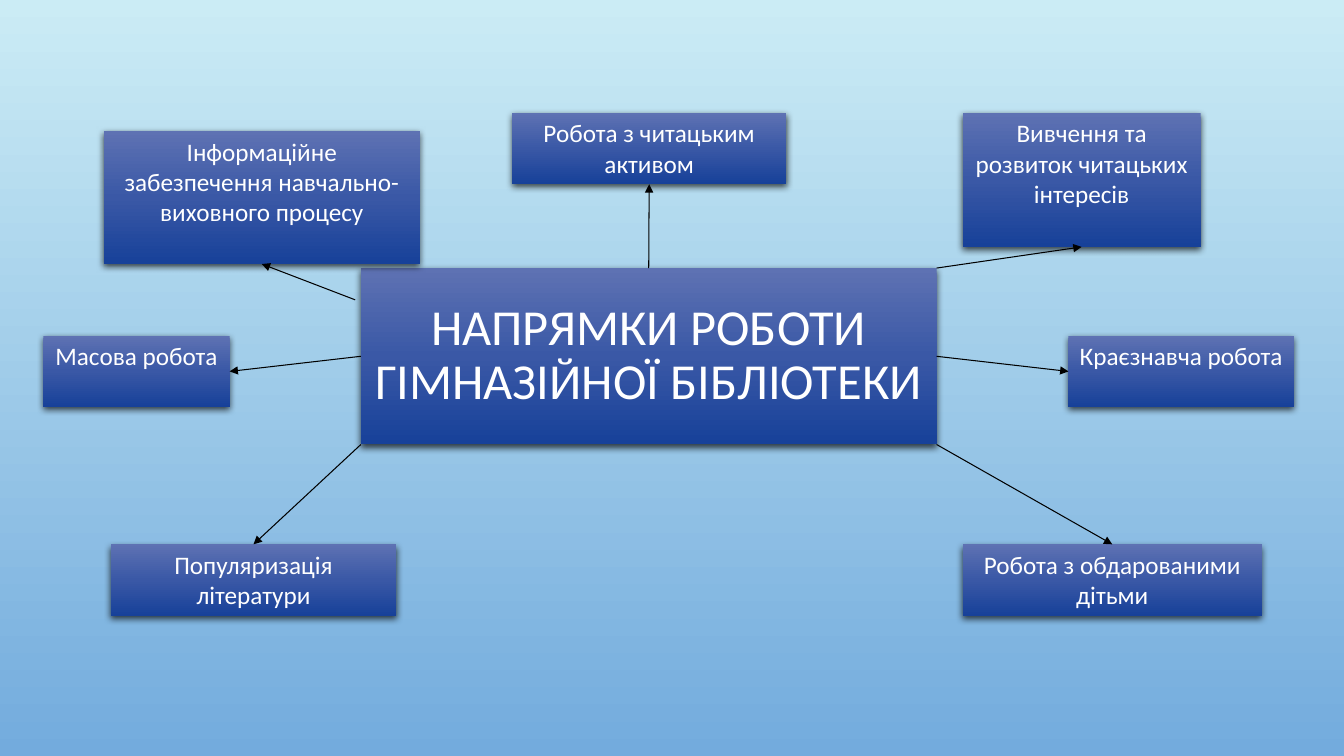
from collections import namedtuple
from copy import deepcopy

from lxml.etree import SubElement
from pptx import Presentation
from pptx.dml.color import RGBColor
from pptx.enum.shapes import MSO_CONNECTOR, MSO_SHAPE
from pptx.enum.text import MSO_ANCHOR, MSO_AUTO_SIZE, PP_ALIGN
from pptx.oxml.ns import qn
from pptx.util import Pt

WHITE = RGBColor(0xFF, 0xFF, 0xFF)
BLACK = RGBColor(0x00, 0x00, 0x00)
SKY = [RGBColor(0xCB, 0xEC, 0xF5), RGBColor(0x73, 0xAB, 0xDD)]
BLUES = [RGBColor(0x5E, 0x72, 0xB3), RGBColor(0x3A, 0x58, 0xA6), RGBColor(0x17, 0x41, 0x99)]

Box = namedtuple("Box", "left top width height")
Direction = namedtuple("Direction", "text box start end")

TITLE = "НАПРЯМКИ РОБОТИ ГІМНАЗІЙНОЇ БІБЛІОТЕКИ"
HUB = Box(257.8, 191.5, 411.2, 126)
TOP, BOTTOM, LEFT, RIGHT = (0.5, 0), (0.5, 1), (0, 0.5), (1, 0.5)
DIRECTIONS = [
    Direction("Інформаційне забезпечення навчально- виховного процесу",
              Box(74, 93.6, 226, 95), (-0.01, 0.18), BOTTOM),
    Direction("Робота з читацьким активом", Box(365.8, 80.6, 195.8, 51), TOP, BOTTOM),
    Direction("Вивчення та розвиток читацьких інтересів",
              Box(687.6, 80.6, 170, 95.8), (1, 0), BOTTOM),
    Direction("Робота з обдарованими дітьми", Box(687.6, 388.8, 213.8, 51), (1, 1), TOP),
    Direction("Краєзнавча робота", Box(763.2, 239.8, 161, 51), RIGHT, LEFT),
    Direction("Популяризація літератури", Box(79.2, 388.8, 203.8, 51), (0, 1), TOP),
    Direction("Масова робота", Box(31, 239.8, 133, 51), LEFT, RIGHT),
]


def apply_format(target, values):
    """Set each named attribute on the target."""
    for name, value in values.items():
        setattr(target, name, value)


def paint_gradient(fill, element, colours):
    """Fill with evenly spaced colours running from top to bottom."""
    fill.gradient()
    fill.gradient_angle = 270
    stop_list = next(element.iter(qn("a:gsLst")))
    for _ in colours[2:]:
        stop_list.append(deepcopy(stop_list[0]))
    for index, (stop, colour) in enumerate(zip(fill.gradient_stops, colours)):
        stop.position = index / (len(colours) - 1)
        stop.color.rgb = colour


def add_soft_shadow(shape):
    """Give the shape a soft shadow falling straight down."""
    shape.shadow.inherit = False
    effects = shape._element.spPr.find(qn("a:effectLst"))
    shadow = SubElement(effects, qn("a:outerShdw"), blurRad=str(Pt(5)), dist=str(Pt(2)),
                        dir="5400000", algn="ctr", rotWithShape="0")
    colour = SubElement(shadow, qn("a:srgbClr"), val=str(BLACK))
    SubElement(colour, qn("a:alpha"), val="69000")


def format_panel(shape, box, text, size, anchor, spacing):
    """Place a blue panel in its box and write its centred text."""
    apply_format(shape, {name: Pt(value) for name, value in box._asdict().items()})
    paint_gradient(shape.fill, shape._element, BLUES)
    shape.line.fill.background()
    add_soft_shadow(shape)
    frame = shape.text_frame
    frame.text = text
    apply_format(frame, {
        "word_wrap": True, "auto_size": MSO_AUTO_SIZE.NONE, "vertical_anchor": anchor,
        "margin_left": Pt(7.2), "margin_right": Pt(7.2),
        "margin_top": Pt(3.6), "margin_bottom": Pt(3.6),
    })
    paragraph = frame.paragraphs[0]
    apply_format(paragraph, {"alignment": PP_ALIGN.CENTER, "line_spacing": spacing,
                             "space_before": Pt(0)})
    run_font = paragraph.runs[0].font
    apply_format(run_font, {"name": "Calibri", "size": Pt(size)})
    run_font.color.rgb = WHITE


def locate(box, fractions):
    """Return the point at the given fractions of the box."""
    across, down = fractions
    return Pt(box.left + across * box.width), Pt(box.top + down * box.height)


def add_arrow(slide, hub, direction):
    """Draw an arrow from the hub to the box of a direction."""
    arrow = slide.shapes.add_connector(
        MSO_CONNECTOR.STRAIGHT,
        *locate(hub, direction.start), *locate(direction.box, direction.end))
    arrow.line.width = Pt(0.75)
    arrow.line.color.rgb = BLACK
    SubElement(arrow.line._get_or_add_ln(), qn("a:tailEnd"), type="triangle")
    SubElement(arrow._element.spPr, qn("a:effectLst"))


def add_directions_slide(presentation, hub):
    """Build the hub and the directions around it."""
    slide = presentation.slides.add_slide(presentation.slide_layouts[5])
    paint_gradient(slide.background.fill, slide._element, SKY)
    format_panel(slide.shapes.title, hub, TITLE, 36, MSO_ANCHOR.MIDDLE, 0.9)
    for direction in DIRECTIONS:
        panel = slide.shapes.add_shape(MSO_SHAPE.RECTANGLE, 0, 0, 0, 0)
        format_panel(panel, direction.box, direction.text, 18, MSO_ANCHOR.TOP, 1.0)
    for direction in DIRECTIONS:
        add_arrow(slide, hub, direction)


def main():
    """Create and save the presentation."""
    presentation = Presentation()
    apply_format(presentation, {"slide_width": Pt(960), "slide_height": Pt(540)})
    add_directions_slide(presentation, HUB)
    presentation.save("out.pptx")


if __name__ == "__main__":
    main()
